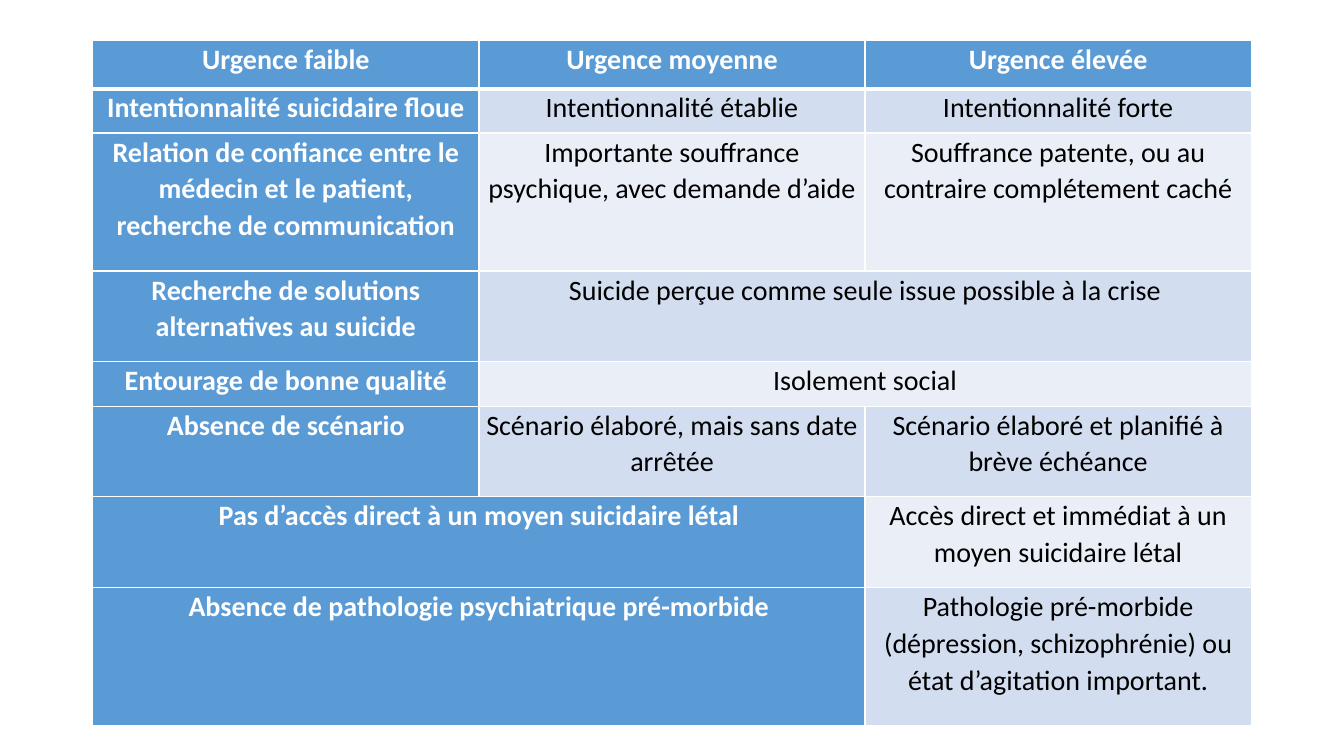
from dataclasses import dataclass

from lxml import etree
from pptx import Presentation
from pptx.dml.color import RGBColor
from pptx.enum.text import MSO_ANCHOR, PP_ALIGN
from pptx.oxml.ns import qn
from pptx.util import Inches, Pt

CENTER = PP_ALIGN.CENTER
TOP = MSO_ANCHOR.TOP


@dataclass(frozen=True)
class Theme:
    font: str = "Calibri"
    text_size: int = 20
    line_spacing: float = 1.07
    accent: str = "5B9BD5"
    bands: tuple = ("EAEFF7", "D2DEEF")
    light: str = "FFFFFF"
    dark: str = "000000"
    rule: int = 1
    header_rule: int = 3


COLUMN_WIDTH = 3.83
ROW_HEIGHTS = [0.48, 0.44, 1.37, 0.9, 0.44, 0.9, 0.9, 1.37]
URGENCY_ROWS = [
    ["Urgence faible", "Urgence moyenne", "Urgence élevée"],
    ["Intentionnalité suicidaire floue", "Intentionnalité établie",
     "Intentionnalité forte"],
    ["Relation de confiance entre le médecin et le patient, recherche de communication",
     "Importante souffrance psychique, avec demande d’aide",
     "Souffrance patente, ou au contraire complétement caché"],
    ["Recherche de solutions alternatives au suicide",
     "Suicide perçue comme seule issue possible à la crise", None],
    ["Entourage de bonne qualité", "Isolement social", None],
    ["Absence de scénario", "Scénario élaboré, mais sans date arrêtée",
     "Scénario élaboré et planifié à brève échéance"],
    ["Pas d’accès direct à un moyen suicidaire létal", None,
     "Accès direct et immédiat à un moyen suicidaire létal"],
    ["Absence de pathologie psychiatrique pré-morbide", None,
     "Pathologie pré-morbide (dépression, schizophrénie) ou état d’agitation important."],
]


class SlideBuilder:
    def __init__(self, slide, theme):
        self.slide = slide
        self.theme = theme

    def table(self, left, top, column_width, row_heights, rows):
        column_count = len(rows[0])
        grid = self.slide.shapes.add_table(
            len(rows), column_count, Inches(left), Inches(top),
            Inches(column_width * column_count), Inches(sum(row_heights))).table
        grid.first_col = True
        for column in grid.columns:
            column.width = Inches(column_width)
        for row, height in zip(grid.rows, row_heights):
            row.height = Inches(height)
        for r, texts in enumerate(rows):
            for c, text in enumerate(texts):
                cell = grid.cell(r, c)
                self.borders(cell, r)
                if text is None:
                    grid.cell(r, c - 1).merge(cell)
                else:
                    self.cell(cell, text, r == 0 or c == 0, r)

    def cell(self, cell, text, is_heading, row_index):
        theme = self.theme
        cell.margin_left = cell.margin_right = Inches(0.07)
        cell.margin_top = cell.margin_bottom = Inches(0)
        cell.vertical_anchor = TOP
        cell.fill.solid()
        background = theme.accent if is_heading else theme.bands[row_index % 2]
        cell.fill.fore_color.rgb = RGBColor.from_string(background)
        paragraph = cell.text_frame.paragraphs[0]
        paragraph.alignment = CENTER
        paragraph.line_spacing = theme.line_spacing
        run = paragraph.add_run()
        run.text = text
        run.font.name = theme.font
        run.font.size = Pt(theme.text_size)
        run.font.bold = is_heading
        run.font.color.rgb = RGBColor.from_string(
            theme.light if is_heading else theme.dark)

    def borders(self, cell, row_index):
        theme = self.theme
        properties = cell._tc.get_or_add_tcPr()
        for side in ("L", "R", "T", "B"):
            under_header = (row_index, side) in ((0, "B"), (1, "T"))
            width = theme.header_rule if under_header else theme.rule
            line = etree.SubElement(properties, qn(f"a:ln{side}"), w=str(Pt(width)))
            fill = etree.SubElement(line, qn("a:solidFill"))
            etree.SubElement(fill, qn("a:srgbClr"), val=theme.light)


def main():
    presentation = Presentation()
    presentation.slide_width = Inches(13.33)
    presentation.slide_height = Inches(7.5)
    slide = presentation.slides.add_slide(presentation.slide_layouts[6])
    builder = SlideBuilder(slide, Theme())
    builder.table(0.92, 0.4, COLUMN_WIDTH, ROW_HEIGHTS, URGENCY_ROWS)
    presentation.save("out.pptx")


if __name__ == "__main__":
    main()
